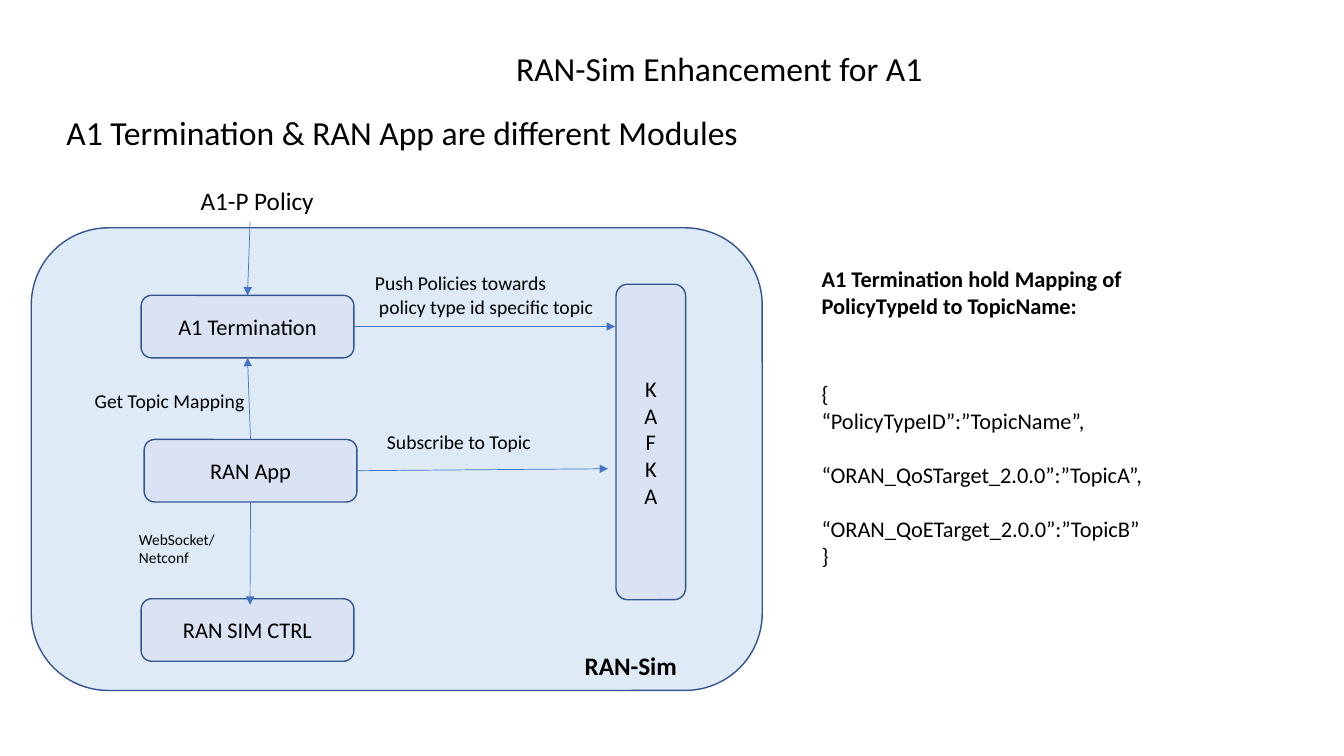
from dataclasses import dataclass

from lxml import etree
from pptx import Presentation
from pptx.dml.color import RGBColor
from pptx.enum.shapes import MSO_CONNECTOR, MSO_SHAPE
from pptx.enum.text import MSO_ANCHOR, PP_ALIGN
from pptx.oxml.ns import qn
from pptx.util import Inches, Pt

STRAIGHT = MSO_CONNECTOR.STRAIGHT
ROUNDED = MSO_SHAPE.ROUNDED_RECTANGLE
MIDDLE = MSO_ANCHOR.MIDDLE
TOP_ANCHOR = MSO_ANCHOR.TOP
CENTER = PP_ALIGN.CENTER
TOP, BOTTOM, RIGHT = 0, 2, 3


@dataclass(frozen=True)
class Theme:
    font: str = "Calibri"
    ink: RGBColor = RGBColor(0x00, 0x00, 0x00)
    panel: RGBColor = RGBColor(0xDE, 0xEB, 0xF7)
    module: RGBColor = RGBColor(0xDA, 0xE3, 0xF3)
    outline: RGBColor = RGBColor(0x32, 0x54, 0x91)
    arrow: RGBColor = RGBColor(0x44, 0x72, 0xC4)
    title: int = 24
    heading: int = 18
    body: int = 16
    label: int = 14
    small: int = 11


class SlideBuilder:
    def __init__(self, slide, theme):
        self.slide = slide
        self.theme = theme

    def set_text(self, frame, text, size, bold=False):
        frame.text = text
        for paragraph in frame.paragraphs:
            for run in paragraph.runs:
                run.font.name = self.theme.font
                run.font.size = Pt(size)
                run.font.bold = bold
                run.font.color.rgb = self.theme.ink

    def box(self, left, top, width, height, fill, text=""):
        box = self.slide.shapes.add_shape(
            ROUNDED, Inches(left), Inches(top), Inches(width), Inches(height))
        box.shadow.inherit = False
        box.fill.solid()
        box.fill.fore_color.rgb = fill
        box.line.color.rgb = self.theme.outline
        box.line.width = Pt(1)
        if text:
            self.set_text(box.text_frame, text, self.theme.body)
            box.text_frame.vertical_anchor = MIDDLE
            for paragraph in box.text_frame.paragraphs:
                paragraph.alignment = CENTER
        return box

    def label(self, left, top, width, height, text, size,
              bold=False, wrap=True, anchor=TOP_ANCHOR):
        frame = self.slide.shapes.add_textbox(
            Inches(left), Inches(top), Inches(width), Inches(height)).text_frame
        frame.word_wrap = wrap
        frame.vertical_anchor = anchor
        self.set_text(frame, text, size, bold)
        return frame.paragraphs

    def title(self, left, top, width, height, text):
        lines = self.label(left, top, width, height, text,
                           self.theme.title, anchor=MIDDLE)
        lines[0].line_spacing = 0.9

    def arrow(self, start, end, source=None, target=None):
        arrow = self.slide.shapes.add_connector(
            STRAIGHT, *(Inches(value) for value in (*start, *end)))
        if source:
            arrow.begin_connect(*source)
        if target:
            arrow.end_connect(*target)
        arrow.line.color.rgb = self.theme.arrow
        arrow.line.width = Pt(0.5)
        properties = arrow._element.spPr
        etree.SubElement(properties.find(qn("a:ln")), qn("a:tailEnd"), type="triangle")
        etree.SubElement(properties, qn("a:effectLst"))


def main():
    deck = Presentation()
    deck.slide_width = Inches(13.33)
    deck.slide_height = Inches(7.5)
    theme = Theme()
    page = SlideBuilder(deck.slides.add_slide(deck.slide_layouts[6]), theme)

    page.title(5.02, 0.48, 5.8, 0.45, "RAN-Sim Enhancement for A1")
    page.title(0.56, 0.99, 8.89, 0.7, "A1 Termination & RAN App are different Modules")

    page.box(0.31, 2.26, 7.25, 4.59, theme.panel)
    a1_termination, ran_app, _ = [
        page.box(left, top, 2.11, 0.62, theme.module, name)
        for left, top, name in (
            (1.4, 2.93, "A1 Termination"),
            (1.43, 4.36, "RAN App"),
            (1.4, 5.94, "RAN SIM CTRL"),
        )
    ]
    page.box(6.11, 2.82, 0.69, 3.13, theme.module, "\n".join("KAFKA"))

    page.arrow((2.48, 2.2), (2.46, 2.93), target=(a1_termination, TOP))
    page.arrow((3.51, 3.24), (6.1, 3.24), source=(a1_termination, RIGHT))
    page.arrow((2.48, 4.36), (2.46, 3.55), (ran_app, TOP), (a1_termination, BOTTOM))
    page.arrow((3.54, 4.67), (6.03, 4.65), source=(ran_app, RIGHT))
    page.arrow((2.48, 4.98), (2.48, 6), source=(ran_app, BOTTOM))

    page.label(1.89, 1.79, 1.55, 0.4, "A1-P Policy", theme.heading)
    push_lines = page.label(3.62, 2.64, 2.98, 0.57,
                            "Push Policies towards\npolicy type id specific topic",
                            theme.label)
    push_lines[1]._p.get_or_add_pPr().set("marL", str(Inches(0.04)))
    page.label(0.84, 3.81, 1.69, 0.34, "Get Topic Mapping", theme.label)
    page.label(3.74, 4.22, 2.14, 0.34, "Subscribe to Topic", theme.label)
    page.label(1.28, 5.21, 1.04, 0.47, "WebSocket/Netconf", theme.small)
    page.label(5.7, 6.4, 1.13, 0.4, "RAN-Sim", theme.heading, bold=True, wrap=False)

    mapping = (
        ("A1 Termination hold Mapping of PolicyTypeId to TopicName:", 0),
        ("{", 44),
        ("“PolicyTypeID”:”TopicName”,", 0),
        ("“ORAN_QoSTarget_2.0.0”:”TopicA”,", 19.5),
        ("“ORAN_QoETarget_2.0.0”:”TopicB”", 19.5),
        ("}", 0),
    )
    mapping_lines = page.label(8.05, 2.58, 3.61, 3.2,
                               "\n".join(text for text, _ in mapping), theme.body)
    mapping_lines[0].runs[0].font.bold = True
    for line, (_, gap) in zip(mapping_lines, mapping):
        if gap:
            line.space_before = Pt(gap)

    deck.save("out.pptx")


if __name__ == "__main__":
    main()
